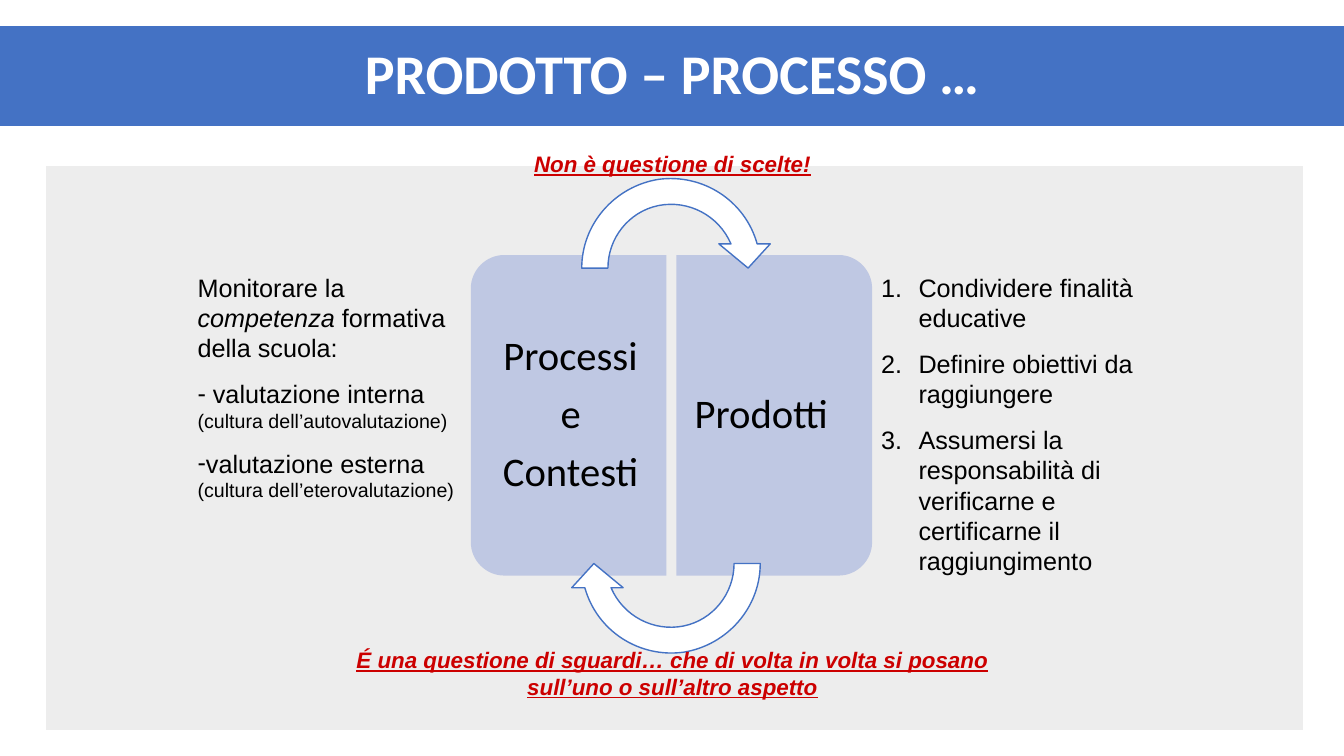
"""Build the slide on product and process in school evaluation."""
from lxml import etree
from pptx import Presentation
from pptx.dml.color import RGBColor
from pptx.enum.shapes import MSO_SHAPE
from pptx.enum.text import MSO_ANCHOR, MSO_AUTO_SIZE, PP_ALIGN
from pptx.oxml.ns import qn
from pptx.util import Inches, Pt

RECTANGLE = MSO_SHAPE.RECTANGLE
TOP, MIDDLE = MSO_ANCHOR.TOP, MSO_ANCHOR.MIDDLE
LEFT, CENTER = PP_ALIGN.LEFT, PP_ALIGN.CENTER
NO_AUTOFIT = MSO_AUTO_SIZE.NONE

COLORS = {"blue": "4472C4", "panel": "EDEDED", "half": "BFC8E3",
          "white": "FFFFFF", "black": "000000", "red": "CC0000"}

TITLE = "PRODOTTO – PROCESSO …"
HALVES = [
    (["Processi", " e ", "Contesti"], CENTER, 4.67, False, (0.22, 0.3, 0.18, 0.3)),
    (["Prodotti"], LEFT, 6.71, True, (0.18, 0.3, 0.22, 0.3)),
]
MONITORING = [
    (None, [("Monitorare la ", {}), ("competenza", {"italic": True}),
            (" formativa della scuola:", {})]),
    ("-", [(" valutazione interna ", {}),
           ("(cultura dell’autovalutazione)", {"size": 14})]),
    ("-", [("valutazione esterna ", {}),
           ("(cultura dell’eterovalutazione)", {"size": 14})]),
]
GOALS = [("1.", [(text, {})]) for text in (
    "Condividere finalità educative",
    "Definire obiettivi da raggiungere",
    "Assumersi la responsabilità di verificarne e certificarne il raggiungimento",
)]
LISTS = [(MONITORING, (1.86, 2.65, 2.95, 2.85)), (GOALS, (8.64, 2.65, 2.84, 3.14))]
CAPTIONS = [
    ("É una questione di sguardi… che di volta in volta si posano "
     "sull’uno o sull’altro aspetto", (3.4, 6.36, 6.54, 0.74)),
    ("Non è questione di scelte!", (3.4, 1.44, 6.54, 0.47)),
]
BULLETS = {
    "-": (0, -0.12, "buChar", {"char": "-"}),
    "1.": (0.37, -0.37, "buAutoNum", {"type": "arabicPeriod"}),
    None: (0, 0, "buNone", {}),
}

HALF_TOP, HALF_WIDTH, HALF_HEIGHT, CORNER, HANDLE = 2.53, 1.94, 3.18, 0.33, 0.15
ARROW_LEFT, ARROW_SIZE = 5.64, 2.03
ARROWS = [(1.65, 0), (4.57, 180)]
ARROW_SEGMENTS = [
    [(0.13, 1.01)],
    [(0.13, 0.57), (0.46, 0.2), (0.89, 0.13)],
    [(1.33, 0.07), (1.75, 0.34), (1.87, 0.77)],
    [(2, 0.77)], [(1.78, 1.01)], [(1.49, 0.77)], [(1.61, 0.77)],
    [(1.49, 0.49), (1.19, 0.33), (0.89, 0.39)],
    [(0.6, 0.45), (0.39, 0.71), (0.39, 1.01)],
]


def color(name):
    return RGBColor.from_string(COLORS[name])


def place(shape, box):
    shape.left, shape.top, shape.width, shape.height = map(Inches, box)


def paint(shape, fill, line=None, width=1):
    shape.shadow.inherit = False
    shape.fill.solid()
    shape.fill.fore_color.rgb = color(fill)
    if line:
        shape.line.color.rgb = color(line)
        shape.line.width = Pt(width)
    else:
        shape.line.fill.background()


def set_frame(shape, anchor, insets=(0.1, 0.05, 0.1, 0.05)):
    frame = shape.text_frame
    frame.word_wrap = True
    frame.auto_size = NO_AUTOFIT
    frame.vertical_anchor = anchor
    (frame.margin_left, frame.margin_top,
     frame.margin_right, frame.margin_bottom) = map(Inches, insets)
    return frame


def add_paragraph(frame, index, align=LEFT, spacing=1.0, before=0):
    paragraph = frame.add_paragraph() if index else frame.paragraphs[0]
    paragraph.alignment = align
    paragraph.line_spacing = spacing
    paragraph.space_before = Pt(before if index else 0)
    paragraph.space_after = Pt(0)
    return paragraph


def add_run(paragraph, text, size, font="Arial", ink="black",
            bold=False, italic=False, underline=False):
    run = paragraph.add_run()
    run.text = text
    run.font.size, run.font.name = Pt(size), font
    run.font.bold, run.font.italic, run.font.underline = bold, italic, underline
    run.font.color.rgb = color(ink)


def set_bullet(paragraph, kind):
    margin, indent, tag, attributes = BULLETS[kind]
    properties = paragraph._p.get_or_add_pPr()
    properties.set("marL", str(Inches(margin)))
    properties.set("indent", str(Inches(indent)))
    etree.SubElement(properties, qn("a:" + tag), attributes)


def add_outline(shapes, box, segments):
    """Draw one-point segments as lines and three-point segments as curves."""
    left, top, width, height = map(Inches, box)
    points = [(left + Inches(x), top + Inches(y))
              for segment in segments for x, y in segment]
    builder = shapes.build_freeform(*points[0])
    builder.add_line_segments(points[1:], close=True)
    shape = builder.convert_to_shape()
    path = next(shape.element.iter(qn("a:path")))
    path.set("w", str(width))
    path.set("h", str(height))
    for point in path.iter(qn("a:pt")):
        point.set("x", str(int(point.get("x")) + shape.left - left))
        point.set("y", str(int(point.get("y")) + shape.top - top))
    steps = iter(list(path))
    for segment in segments:
        first, *others = [next(steps) for _ in segment]
        if others:
            curve = etree.Element(qn("a:cubicBezTo"))
            path.replace(first, curve)
            for step in [first, *others]:
                curve.append(step[0])
            for step in others:
                path.remove(step)
    place(shape, box)
    return shape


def half_segments(mirrored):
    low = HALF_HEIGHT - CORNER
    segments = [
        [(0, low)], [(0, CORNER)],
        [(0, HANDLE), (HANDLE, 0), (CORNER, 0)],
        [(HALF_WIDTH, 0)], [(HALF_WIDTH, HALF_HEIGHT)], [(CORNER, HALF_HEIGHT)],
        [(HANDLE, HALF_HEIGHT), (0, HALF_HEIGHT - HANDLE), (0, low)],
    ]
    return [[(HALF_WIDTH - x if mirrored else x, y) for x, y in segment]
            for segment in segments]


def main():
    presentation = Presentation()
    presentation.slide_width, presentation.slide_height = Inches(13.33), Inches(7.5)
    slide = presentation.slides.add_slide(presentation.slide_layouts[3])
    shapes = slide.shapes
    title, *bodies = list(slide.placeholders)[:3]

    panel = shapes.add_shape(RECTANGLE, *map(Inches, (0.46, 1.65, 12.46, 5.59)))
    paint(panel, "panel", "panel")

    for lines, align, left, mirrored, insets in HALVES:
        box = (left, HALF_TOP, HALF_WIDTH, HALF_HEIGHT)
        half = add_outline(shapes, box, half_segments(mirrored))
        paint(half, "half")
        frame = set_frame(half, MIDDLE, insets)
        for index, line in enumerate(lines):
            paragraph = add_paragraph(frame, index, align, 0.9, 10.2)
            add_run(paragraph, line, 29, "Calibri")

    for top, rotation in ARROWS:
        box = (ARROW_LEFT, top, ARROW_SIZE, ARROW_SIZE)
        arrow = add_outline(shapes, box, ARROW_SEGMENTS)
        arrow.rotation = rotation
        paint(arrow, "white", "blue")

    for body, (items, box) in zip(bodies, LISTS):
        shapes.element.append(body.element)
        place(body, box)
        frame = set_frame(body, TOP)
        for index, (bullet, runs) in enumerate(items):
            paragraph = add_paragraph(frame, index, before=11.2)
            set_bullet(paragraph, bullet)
            for text, style in runs:
                add_run(paragraph, text, **{"size": 18, **style})

    for text, box in CAPTIONS:
        caption = shapes.add_textbox(*map(Inches, box))
        paragraph = add_paragraph(set_frame(caption, TOP), 0, CENTER)
        add_run(paragraph, text, 16, ink="red", bold=True, italic=True, underline=True)

    shapes.element.append(title.element)
    place(title, (0, 0.26, 13.33, 0.99))
    paint(title, "blue", "blue", 0.75)
    paragraph = add_paragraph(set_frame(title, MIDDLE), 0, CENTER, 0.9)
    add_run(paragraph, TITLE, 40, "Calibri", "white", bold=True)

    presentation.save("out.pptx")


if __name__ == "__main__":
    main()
